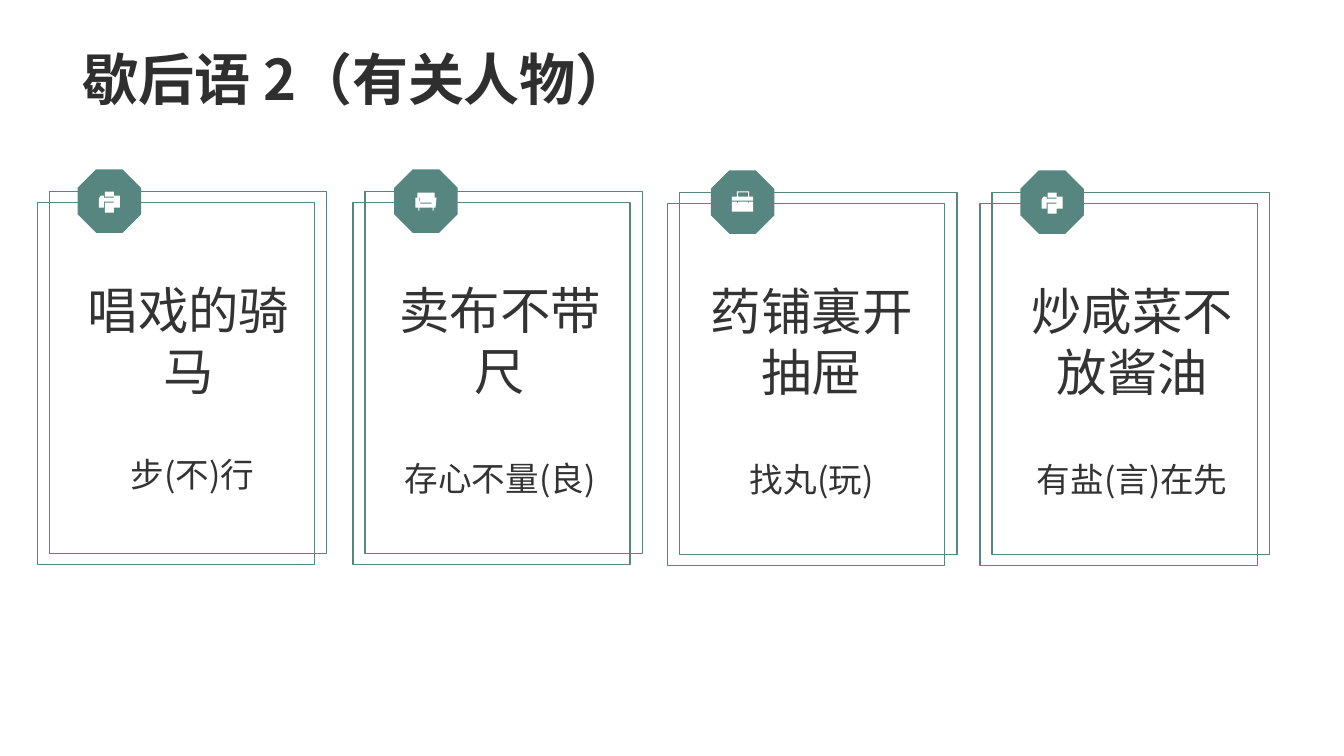
from lxml import etree
from pptx import Presentation
from pptx.dml.color import RGBColor
from pptx.enum.shapes import MSO_SHAPE
from pptx.enum.text import MSO_ANCHOR, PP_ALIGN
from pptx.oxml.ns import qn
from pptx.util import Inches, Pt

RECT, OCTAGON = MSO_SHAPE.RECTANGLE, MSO_SHAPE.OCTAGON
TOP, BOTTOM = MSO_ANCHOR.TOP, MSO_ANCHOR.BOTTOM
LEFT, CENTER = PP_ALIGN.LEFT, PP_ALIGN.CENTER

GREEN, WHITE, DARK, GREY = "56867F", "FFFFFF", "2F2F2F", "333333"
SANS, CJK = "Arial", "Noto Sans CJK SC"

TITLE = "歇后语 2（有关人物）"

# Icon outlines in hundredths of an inch from the badge corner
PRINTER = [
    [(36, 33), (36, 43), (27, 43), (27, 33)],
    [(26, 26), (26, 28), (36, 28), (36, 26), (42, 26), (42, 38), (36, 38),
     (36, 32), (26, 32), (26, 38), (21, 38), (21, 29), (23, 26)],
    [(36, 22), (36, 27), (27, 27), (27, 22)],
]
SOFA = [
    [(24, 28), (26, 34), (37, 34), (38, 28), (42, 28), (41, 38), (39, 38), (39, 41),
     (38, 41), (38, 38), (25, 38), (25, 41), (24, 41), (24, 38), (21, 38), (21, 28)],
    [(40, 23), (40, 28), (38, 28), (37, 33), (26, 33), (25, 28), (23, 28), (23, 23)],
]
CASE = [
    [(26, 31), (26, 32), (27, 32), (27, 31), (37, 31), (37, 32), (38, 32), (38, 31),
     (42, 31), (42, 41), (21, 41), (21, 31)],
    [(38, 21), (38, 26), (42, 26), (42, 30), (21, 30), (21, 26), (26, 26), (26, 21)],
    [(37, 22), (27, 22), (27, 26), (37, 26)],
]

# saying, ending, icon, frame x, badge x, text x, drop, gap before the ending
CARDS = [
    ("唱戏的骑马", " 步(不)行", PRINTER, 0.37, 0.77, 0.74, 0, 38),
    ("卖布不带尺", "存心不量(良)", SOFA, 3.5, 3.91, 3.83, 0, 41),
    ("药铺裏开抽屉", "找丸(玩)", CASE, 6.62, 7.05, 6.92, 0.01, 41),
    ("炒咸菜不放酱油", "有盐(言)在先", PRINTER, 9.72, 10.12, 10.1, 0.01, 41),
]
CARD_W, CARD_H, SHIFT = 2.75, 3.59, 0.12
BADGE = 0.63


def color(code):
    return RGBColor.from_string(code)


def paint(shape, fill=None, line=None):
    shape.shadow.inherit = False
    if fill:
        shape.fill.solid()
        shape.fill.fore_color.rgb = color(fill)
    else:
        shape.fill.background()
    if line:
        shape.line.color.rgb = color(line)
        shape.line.width = Pt(1)
    else:
        shape.line.fill.background()


def block(slide, kind, x, y, w, h, **look):
    shape = slide.shapes.add_shape(kind, Inches(x), Inches(y), Inches(w), Inches(h))
    paint(shape, **look)


def icon(slide, rings, x, y):
    pen = slide.shapes.build_freeform(*rings[0][0], scale=Inches(0.01))
    for i, ring in enumerate(rings):
        if i:
            pen.move_to(*ring[0])
        pen.add_line_segments(ring[1:], close=True)
    paint(pen.convert_to_shape(Inches(x), Inches(y)), fill=WHITE)


def frame(slide, x, y, w, h, anchor=TOP, top=0.05, bottom=0.05):
    """Add an empty wrapping text box and return its text frame."""
    box = slide.shapes.add_textbox(Inches(x), Inches(y), Inches(w), Inches(h))
    body = box.text_frame
    body.word_wrap = True
    body.vertical_anchor = anchor
    body.margin_top, body.margin_bottom = Inches(top), Inches(bottom)
    return body


def write(para, text, size, font=CJK, ink=GREY, bold=False, align=CENTER,
          pitch=None, before=None):
    para.alignment = align
    para.line_spacing = pitch or Pt(size * 1.2)
    if before:
        para.space_before = Pt(before)
    run = para.add_run()
    run.text = text
    run.font.size, run.font.bold, run.font.name = Pt(size), bold, font
    run.font.color.rgb = color(ink)
    east = etree.SubElement(run.font._element, qn("a:ea"))
    east.set("typeface", CJK)


def card(slide, saying, ending, rings, x, badge, left, drop, gap):
    low, high = 2.01 + drop, 1.9 + drop
    block(slide, RECT, x, low, CARD_W, CARD_H, line=GREEN)
    block(slide, RECT, x + SHIFT, high, CARD_W, CARD_H, line=GREEN)
    y = 1.68 + drop
    block(slide, OCTAGON, badge, y, BADGE, BADGE, fill=GREEN)
    icon(slide, rings, badge, y)
    body = frame(slide, left, 2.67 + drop, 2.26, 2.32, top=0.1)
    write(body.paragraphs[0], saying, 36, font=SANS)
    write(body.add_paragraph(), ending, 24, before=gap)


def main():
    deck = Presentation()
    deck.slide_width, deck.slide_height = Inches(13.33), Inches(7.5)
    slide = deck.slides.add_slide(deck.slide_layouts[6])
    head = frame(slide, 0.72, 0, 11.88, 1.12, anchor=BOTTOM, bottom=0)
    write(head.paragraphs[0], TITLE, 40, ink=DARK, bold=True, align=LEFT, pitch=0.9)
    for item in CARDS:
        card(slide, *item)
    deck.save("out.pptx")


if __name__ == "__main__":
    main()
